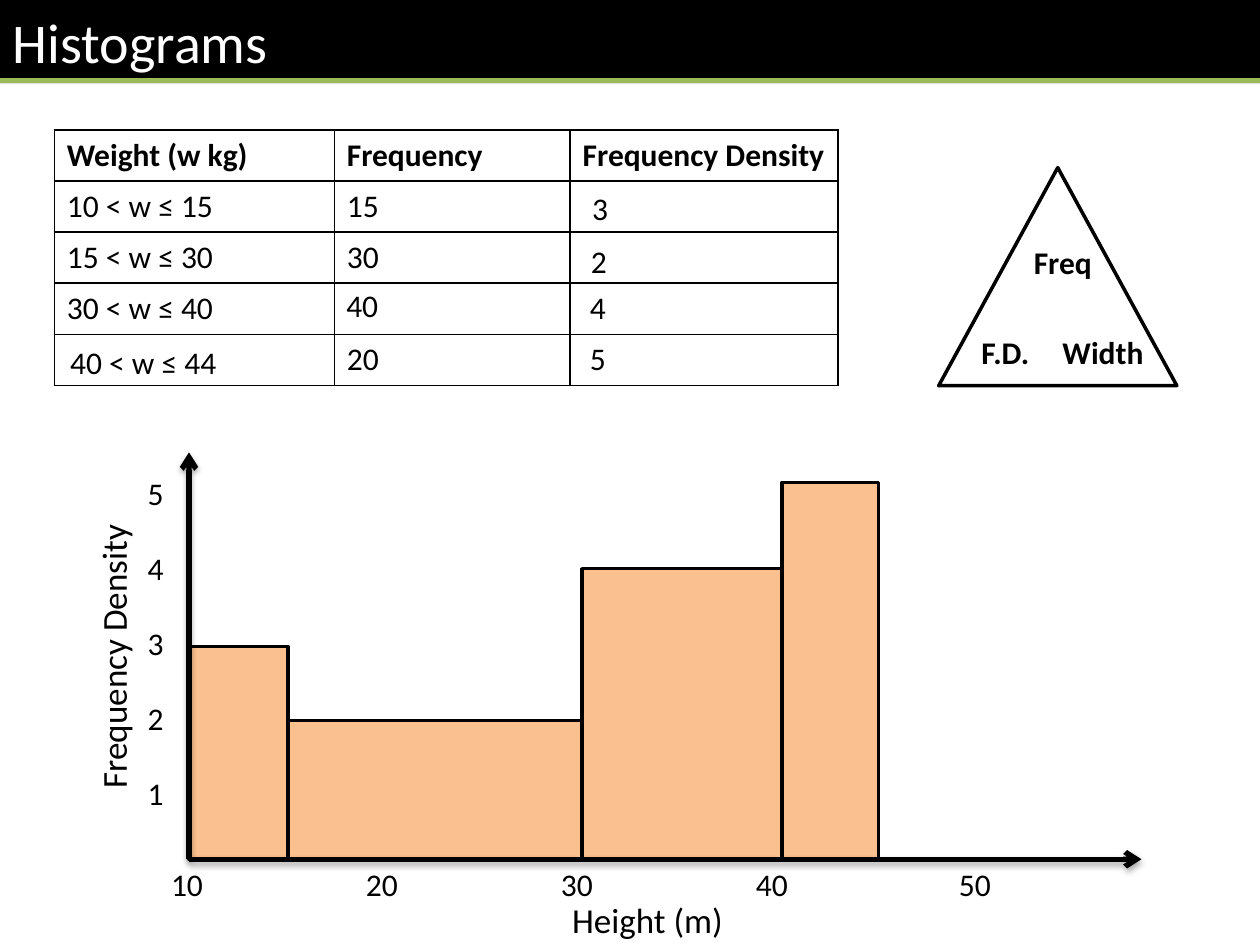
from typing import NamedTuple

from lxml.etree import SubElement
from pptx import Presentation
from pptx.dml.color import RGBColor
from pptx.enum.shapes import MSO_CONNECTOR, MSO_SHAPE
from pptx.enum.text import MSO_ANCHOR, PP_ALIGN
from pptx.oxml import parse_xml
from pptx.oxml.ns import nsdecls, qn
from pptx.util import Pt

COLORS = {"black": "000000", "white": "FFFFFF", "green": "9BBB59", "bar": "FAC090"}
FONT = "Calibri"


class Label(NamedTuple):
    text: str
    x: float
    y: float
    w: float
    h: float = 29
    size: float = 18
    bold: bool = False
    align: PP_ALIGN = PP_ALIGN.CENTER
    wrap: bool = True
    rotation: float = 0
    gap: float = 0


class Bar(NamedTuple):
    left: float
    right: float
    top: float


class Line(NamedTuple):
    x1: float
    y1: float
    x2: float
    y2: float
    color: str = "black"
    arrow: bool = False


# Histogram geometry
ORIGIN_X, BASE_Y = 108, 491
BARS = [
    Bar(108, 164.5, 369.3),
    Bar(164.5, 332.7, 411.8),
    Bar(332.7, 446.8, 325),
    Bar(446.8, 502, 275.8),
]
AXES = [
    Line(ORIGIN_X, BASE_Y, ORIGIN_X, 258.5, arrow=True),
    Line(ORIGIN_X, BASE_Y, 652.3, BASE_Y, arrow=True),
]
X_TICKS = {10: 106.9, 20: 218.3, 30: 329.7, 40: 441.1, 50: 557.1}

# Table, with the worked answers laid over its empty cells
ROWS = [
    ["Weight (w kg)", "Frequency", "Frequency Density"],
    ["10 < w ≤ 15", "15", ""],
    ["15 < w ≤ 30", "30", ""],
    ["30 < w ≤ 40", "", " 4"],
    ["", "20", " 5"],
]
COL_WIDTHS = [160, 134.8, 153.2]
ROW_HEIGHT = 29.2
ANSWERS = [
    Label("3", 331.2, 104.4, 24, align=PP_ALIGN.LEFT, wrap=False),
    Label("2", 330.5, 134.8, 24, align=PP_ALIGN.LEFT, wrap=False),
    Label("40", 190.8, 160, 33, align=PP_ALIGN.LEFT, wrap=False),
    Label("40 < w ≤ 44", 33, 192.4, 99.4, align=PP_ALIGN.LEFT, wrap=False),
]
TRIANGLE_LABELS = [
    Label("Freq", 581.8, 135.4, 51, bold=True),
    Label("F.D.", 553.7, 186.5, 51, bold=True, align=PP_ALIGN.LEFT),
    Label("Width", 599, 186.5, 62.6, bold=True),
]
AXIS_LABELS = [
    *[Label(str(value), x - 25, BASE_Y, 50) for value, x in X_TICKS.items()],
    Label("5\n4\n3\n2\n1", 69.1, 267.1, 39.6, 203.8, gap=21.3),
    Label("Height (m)", 314.6, 509.8, 110.9, 31.7, 20),
    Label("Frequency Density", -25.9, 359.3, 181.4, 31.7, 20, rotation=270),
]


def rgb(name: str) -> RGBColor:
    return RGBColor.from_string(COLORS[name])


def format_text(tf, size: float, color: str = "black", bold: bool = False) -> None:
    for p in tf.paragraphs:
        for r in p.runs:
            r.font.name, r.font.size, r.font.bold = FONT, Pt(size), bold
            r.font.color.rgb = rgb(color)


def add_label(s, label: Label) -> None:
    sp = s.shapes.add_textbox(Pt(label.x), Pt(label.y), Pt(label.w), Pt(label.h))
    sp.rotation = label.rotation
    tf = sp.text_frame
    tf.word_wrap = label.wrap
    tf.text = label.text
    for i, p in enumerate(tf.paragraphs):
        p.alignment = label.align
        p.space_before = Pt(label.gap if i else 0)
    format_text(tf, label.size, bold=label.bold)


def add_outlined(s, kind: MSO_SHAPE, x: float, y: float, w: float, h: float, fill: str) -> None:
    sp = s.shapes.add_shape(kind, Pt(x), Pt(y), Pt(w), Pt(h))
    sp.shadow.inherit = False
    sp.fill.solid()
    sp.fill.fore_color.rgb = rgb(fill)
    sp.line.color.rgb = rgb("black")
    sp.line.width = Pt(2)


def add_line(s, line: Line) -> None:
    ends = [Pt(v) for v in (line.x1, line.y1, line.x2, line.y2)]
    sp = s.shapes.add_connector(MSO_CONNECTOR.STRAIGHT, *ends)
    sp.line.color.rgb = rgb(line.color)
    sp.line.width = Pt(3)
    effects = SubElement(sp._element.spPr, qn("a:effectLst"))
    if line.arrow:
        SubElement(sp.line._get_or_add_ln(), qn("a:tailEnd"), type="arrow")
        effects.append(parse_xml(
            f'<a:outerShdw {nsdecls("a")} blurRad="{Pt(3.1)}" dist="{Pt(1.8)}" '
            f'dir="5400000" rotWithShape="0"><a:srgbClr val="{COLORS["black"]}">'
            '<a:alpha val="35000"/></a:srgbClr></a:outerShdw>'))


def add_data_table(s, x: float, y: float) -> None:
    table = s.shapes.add_table(
        len(ROWS), len(COL_WIDTHS), Pt(x), Pt(y),
        Pt(sum(COL_WIDTHS)), Pt(ROW_HEIGHT * len(ROWS))).table
    table.first_row = table.horz_banding = False
    for column, width in zip(table.columns, COL_WIDTHS):
        column.width = Pt(width)
    for i, row in enumerate(ROWS):
        table.rows[i].height = Pt(ROW_HEIGHT)
        for j, text in enumerate(row):
            cell = table.cell(i, j)
            cell.text_frame.text = text
            format_text(cell.text_frame, 18, bold=i == 0)
            cell.fill.background()
            for k, side in enumerate(("lnL", "lnR", "lnT", "lnB")):
                border = parse_xml(
                    f'<a:{side} {nsdecls("a")} w="{Pt(1)}"><a:solidFill>'
                    f'<a:srgbClr val="{COLORS["black"]}"/></a:solidFill></a:{side}>')
                cell._tc.get_or_add_tcPr().insert(k, border)


def add_title(s, text: str) -> None:
    sp = s.shapes.title
    sp.left, sp.top, sp.width, sp.height = Pt(0), Pt(0), Pt(720), Pt(47.5)
    sp.fill.solid()
    sp.fill.fore_color.rgb = rgb("black")
    tf = sp.text_frame
    tf.text = text
    tf.vertical_anchor = MSO_ANCHOR.MIDDLE
    tf.paragraphs[0].alignment = PP_ALIGN.LEFT
    format_text(tf, 32, "white")


def main() -> None:
    prs = Presentation()
    prs.slide_width, prs.slide_height = Pt(720), Pt(540)
    s = prs.slides.add_slide(prs.slide_layouts[5])

    # Title band
    add_title(s, "Histograms")
    add_line(s, Line(0, 46.1, 720, 46.1, "green"))

    # Table and formula triangle
    add_data_table(s, 31, 74.2)
    add_outlined(s, MSO_SHAPE.ISOSCELES_TRIANGLE, 536.4, 95.8, 136.1, 124.6, "white")

    # Histogram
    for bar in BARS:
        add_outlined(s, MSO_SHAPE.RECTANGLE, bar.left, bar.top,
                     bar.right - bar.left, BASE_Y - bar.top, "bar")
    for axis in AXES:
        add_line(s, axis)

    # Text over the table, triangle and axes
    for label in ANSWERS + TRIANGLE_LABELS + AXIS_LABELS:
        add_label(s, label)

    prs.save("out.pptx")


if __name__ == "__main__":
    main()
